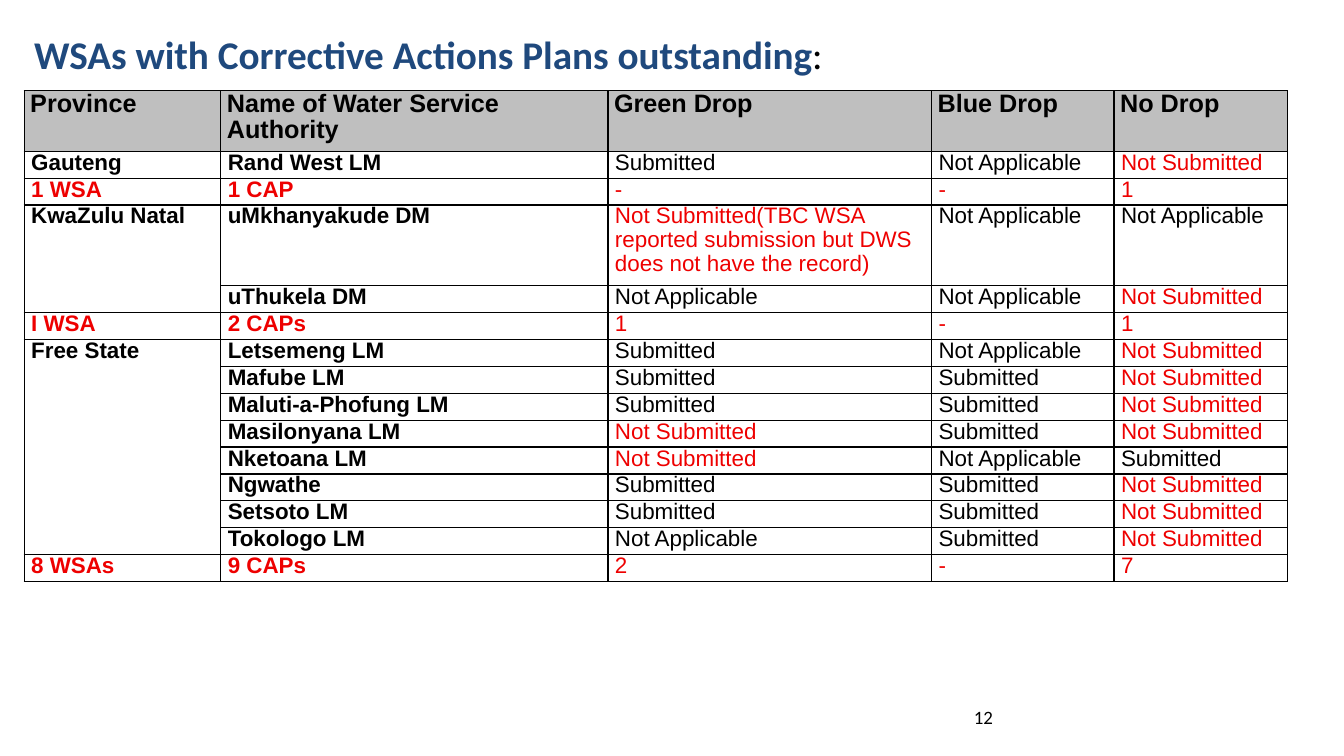
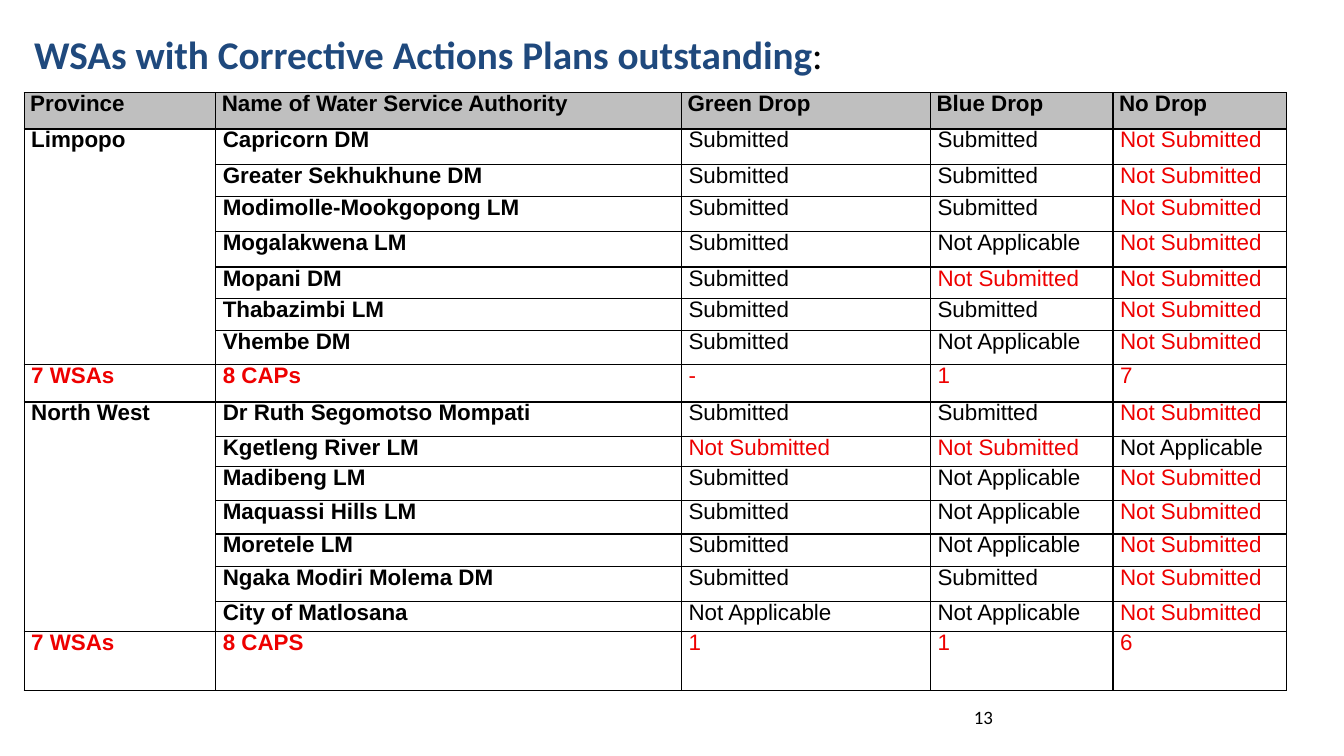
from lxml import etree
from pptx import Presentation
from pptx.dml.color import RGBColor
from pptx.oxml import ns
from pptx.util import Inches, Pt

NAVY = RGBColor(0x1F, 0x49, 0x7D)
BLACK = RGBColor(0, 0, 0)
RED = RGBColor(0xEE, 0, 0)
GREY = RGBColor(0xBF, 0xBF, 0xBF)
WHITE = RGBColor(0xFF, 0xFF, 0xFF)

LEFT = 0.24
HEADERS = ["Province", "Name of Water Service Authority",
           "Green Drop", "Blue Drop", "No Drop"]
SUB, NOT, NA = "Submitted", "Not Submitted", "Not Applicable"

# Each province: name, its authorities, totals row
FIRST_PROVINCES = [
    ("Gauteng", [("Rand West LM", SUB, NA, NOT)],
     ("1 WSA", "1 CAP", "-", "-", "1")),
    ("KwaZulu Natal", [
        ("uMkhanyakude DM", "Not Submitted(TBC WSA reported submission "
         "but DWS does not have the record)", NA, NA),
        ("uThukela DM", NA, NA, NOT),
    ], ("I WSA", "2 CAPs", "1", "-", "1")),
    ("Free State", [
        ("Letsemeng LM", SUB, NA, NOT),
        ("Mafube LM", SUB, SUB, NOT),
        ("Maluti-a-Phofung LM", SUB, SUB, NOT),
        ("Masilonyana LM", NOT, SUB, NOT),
        ("Nketoana LM", NOT, NA, SUB),
        ("Ngwathe", SUB, SUB, NOT),
        ("Setsoto LM", SUB, SUB, NOT),
        ("Tokologo LM", NA, SUB, NOT),
    ], ("8 WSAs", "9 CAPs", "2", "-", "7")),
]
SECOND_PROVINCES = [
    ("Limpopo", [
        ("Capricorn DM", SUB, SUB, NOT),
        ("Greater Sekhukhune DM", SUB, SUB, NOT),
        ("Modimolle-Mookgopong LM", SUB, SUB, NOT),
        ("Mogalakwena LM", SUB, NA, NOT),
        ("Mopani DM", SUB, NOT, NOT),
        ("Thabazimbi LM", SUB, SUB, NOT),
        ("Vhembe DM", SUB, NA, NOT),
    ], ("7 WSAs", "8 CAPs", "-", "1", "7")),
    ("North West", [
        ("Dr Ruth Segomotso Mompati", SUB, SUB, NOT),
        ("Kgetleng River LM", NOT, NOT, NA),
        ("Madibeng LM", SUB, NA, NOT),
        ("Maquassi Hills LM", SUB, NA, NOT),
        ("Moretele LM", SUB, NA, NOT),
        ("Ngaka Modiri Molema DM", SUB, SUB, NOT),
        ("City of Matlosana", NA, NA, NOT),
    ], ("7 WSAs", "8 CAPS", "1", "1", "6")),
]


class Deck:
    """Holds the shared style and the current slide."""

    def __init__(self):
        self.prs = Presentation()
        self.prs.slide_width, self.prs.slide_height = Inches(13.33), Inches(7.5)
        self.slide = None

    def new_slide(self, number):
        self.slide = self.prs.slides.add_slide(self.prs.slide_layouts[6])
        self.text(9.56, 6.95, 3.11, 0.4, [(str(number), 13.5, BLACK, False)])
        self.text(LEFT, 0.25, 10.35, 0.57, [
            ("WSAs with Corrective Actions Plans outstanding", 28, NAVY, True),
            (":", 28, BLACK, False)])

    def run(self, p, content, size, color, bold, font="Calibri"):
        r = p.add_run()
        r.text = content
        r.font.name, r.font.size, r.font.bold = font, Pt(size), bold
        r.font.color.rgb = color

    def text(self, x, y, w, h, runs):
        tf = self.slide.shapes.add_textbox(
            Inches(x), Inches(y), Inches(w), Inches(h)).text_frame
        tf.word_wrap = True
        for item in runs:
            self.run(tf.paragraphs[0], *item)

    def borders(self, cell):
        tcPr = cell._tc.get_or_add_tcPr()
        for side in ("lnL", "lnR", "lnT", "lnB"):
            ln = etree.SubElement(tcPr, ns.qn("a:" + side), w=str(Pt(1)))
            fill = etree.SubElement(ln, ns.qn("a:solidFill"))
            etree.SubElement(fill, ns.qn("a:srgbClr"), val=str(BLACK))

    def cell(self, cell, content, size, color, bold, fill, inset):
        self.borders(cell)
        cell.fill.solid()
        cell.fill.fore_color.rgb = fill
        cell.margin_left = cell.margin_right = Inches(inset)
        cell.margin_top = cell.margin_bottom = 0
        if content:
            p = cell.text_frame.paragraphs[0]
            p.line_spacing = 0.95
            self.run(p, content, size, color, bold, "Arial")

    def table(self, top, widths, heights, header_size, provinces):
        shape = self.slide.shapes.add_table(
            len(heights), len(widths), Inches(LEFT), Inches(top),
            Inches(sum(widths)), Inches(sum(heights)))
        tbl = shape.table
        tbl.horz_banding = tbl.first_row = False
        for col, w in zip(tbl.columns, widths):
            col.width = Inches(w)
        for row, h in zip(tbl.rows, heights):
            row.height = Inches(h)

        for c, header in enumerate(HEADERS):
            self.cell(tbl.cell(0, c), header, header_size, BLACK, True, GREY, 0.06)
        i = 1
        for province, authorities, totals in provinces:
            first = i
            for authority in authorities:
                label = province if i == first else ""
                self.row(tbl, i, (label, *authority))
                i += 1
            if len(authorities) > 1:
                tbl.cell(first, 0).merge(tbl.cell(i - 1, 0))
            self.row(tbl, i, totals, is_total=True)
            i += 1

    def row(self, tbl, i, values, is_total=False):
        for c, value in enumerate(values):
            color = RED if is_total or value.startswith(NOT) else BLACK
            self.cell(tbl.cell(i, c), value, 16, color, c < 2, WHITE, 0.07)


def main():
    deck = Deck()
    deck.new_slide(12)
    line = 0.267
    deck.table(0.9, [1.95, 3.84, 3.21, 1.81, 1.72],
               [0.6, line, line, 0.8] + [line] * 11, 18, FIRST_PROVINCES)
    deck.new_slide(13)
    deck.table(0.92, [1.9, 4.62, 2.47, 1.81, 1.72],
               [0.36, 0.35, 0.32, 0.35, 0.35, 0.31, 0.32, 0.34, 0.37,
                0.34, 0.3, 0.34, 0.33, 0.32, 0.35, 0.3, 0.58],
               16, SECOND_PROVINCES)
    deck.prs.save("out.pptx")


if __name__ == "__main__":
    main()
